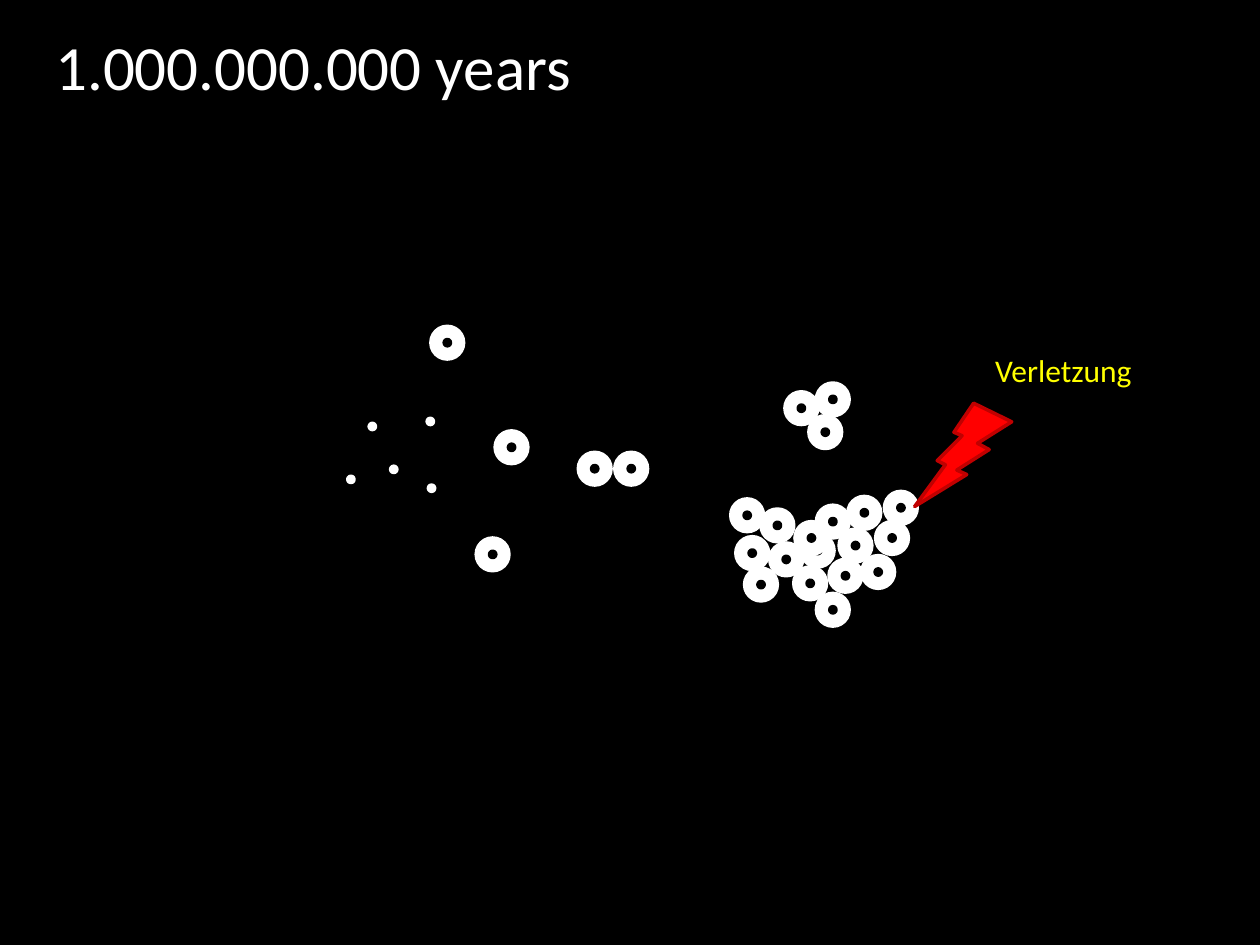
import pptx
import pptx.util
from pptx.dml.color import RGBColor
from pptx.enum.shapes import MSO_SHAPE
from pptx.enum.text import MSO_ANCHOR, MSO_AUTO_SIZE, PP_ALIGN
from pptx.oxml.ns import qn
from pptx.util import Inches

BLACK = RGBColor(0x00, 0x00, 0x00)
WHITE = RGBColor(0xFF, 0xFF, 0xFF)
RED = RGBColor(0xFF, 0x00, 0x00)
DARK_RED = RGBColor(0xC0, 0x00, 0x00)
YELLOW = RGBColor(0xFF, 0xFF, 0x00)

TITLE = "1.000.000.000 years"
INJURY = "Verletzung"

DOT_SIZE = 0.05
CELL_SIZE = 0.26
MOLECULES = [(3.1, 3.7), (3.39, 3.32), (2.76, 3.78), (2.93, 3.36), (3.4, 3.85)]
SINGLE_CELLS = [(3.93, 3.42), (3.42, 2.59), (3.78, 4.27)]
CELL_PAIR = [(4.59, 3.59), (4.88, 3.59)]
CELL_TRIO = [(6.23, 3.11), (6.42, 3.3), (6.48, 3.04)]
ORGANISM = [
    (6.11, 4.31), (6.3, 4.5), (6.36, 4.24), (6.58, 4.44), (6.48, 4.71),
    (6.66, 4.2), (6.48, 4.01), (6.73, 3.94), (6.95, 4.14), (6.84, 4.41),
    (7.02, 3.9), (5.91, 4.51), (5.84, 4.26), (6.04, 4.04), (6.31, 4.14),
    (5.8, 3.96),
]


def add_shape(page, kind, left, top, width, height, fill, line):
    shape = page.shapes.add_shape(
        kind, Inches(left), Inches(top), Inches(width), Inches(height))
    shape.shadow.inherit = False
    shape.fill.solid()
    shape.fill.fore_color.rgb = fill
    shape.line.color.rgb = line
    shape.line.width = pptx.util.Pt(2)
    return shape


def add_circle(page, left, top, size, color):
    add_shape(page, MSO_SHAPE.OVAL, left, top, size, size, color, color)


def add_cell(page, left, top):
    inset = (CELL_SIZE - DOT_SIZE) / 2
    add_circle(page, left, top, CELL_SIZE, WHITE)
    add_circle(page, left + inset, top + inset, DOT_SIZE, BLACK)


def write(shape, text, size, color):
    para = shape.text_frame.paragraphs[0]
    para.text = text
    para.alignment = PP_ALIGN.LEFT
    para.font.name = "Calibri"
    para.font.size = pptx.util.Pt(size)
    para.font.color.rgb = color


def main():
    deck = pptx.Presentation()
    deck.slide_width = Inches(10)
    deck.slide_height = Inches(7.5)
    page = deck.slides.add_slide(deck.slide_layouts[6])
    page.background.fill.solid()
    page.background.fill.fore_color.rgb = BLACK

    for left, top in MOLECULES:
        add_circle(page, left, top, DOT_SIZE, WHITE)
    for left, top in SINGLE_CELLS + CELL_PAIR + CELL_TRIO + ORGANISM:
        add_cell(page, left, top)

    bolt = add_shape(page, MSO_SHAPE.LIGHTNING_BOLT, 7.26, 3.2, 0.77, 0.82, RED, DARK_RED)
    bolt.element.spPr.find(qn("a:xfrm")).set("flipH", "1")

    title = add_shape(page, MSO_SHAPE.RECTANGLE, 0.34, 0.3, 4.61, 0.44, BLACK, BLACK)
    title.text_frame.vertical_anchor = MSO_ANCHOR.MIDDLE
    write(title, TITLE, 36, WHITE)

    label = page.shapes.add_textbox(Inches(7.8), Inches(2.74), Inches(1.3), Inches(0.4))
    label.text_frame.word_wrap = False
    label.text_frame.auto_size = MSO_AUTO_SIZE.SHAPE_TO_FIT_TEXT
    write(label, INJURY, 18, YELLOW)

    deck.save("out.pptx")


if __name__ == "__main__":
    main()
